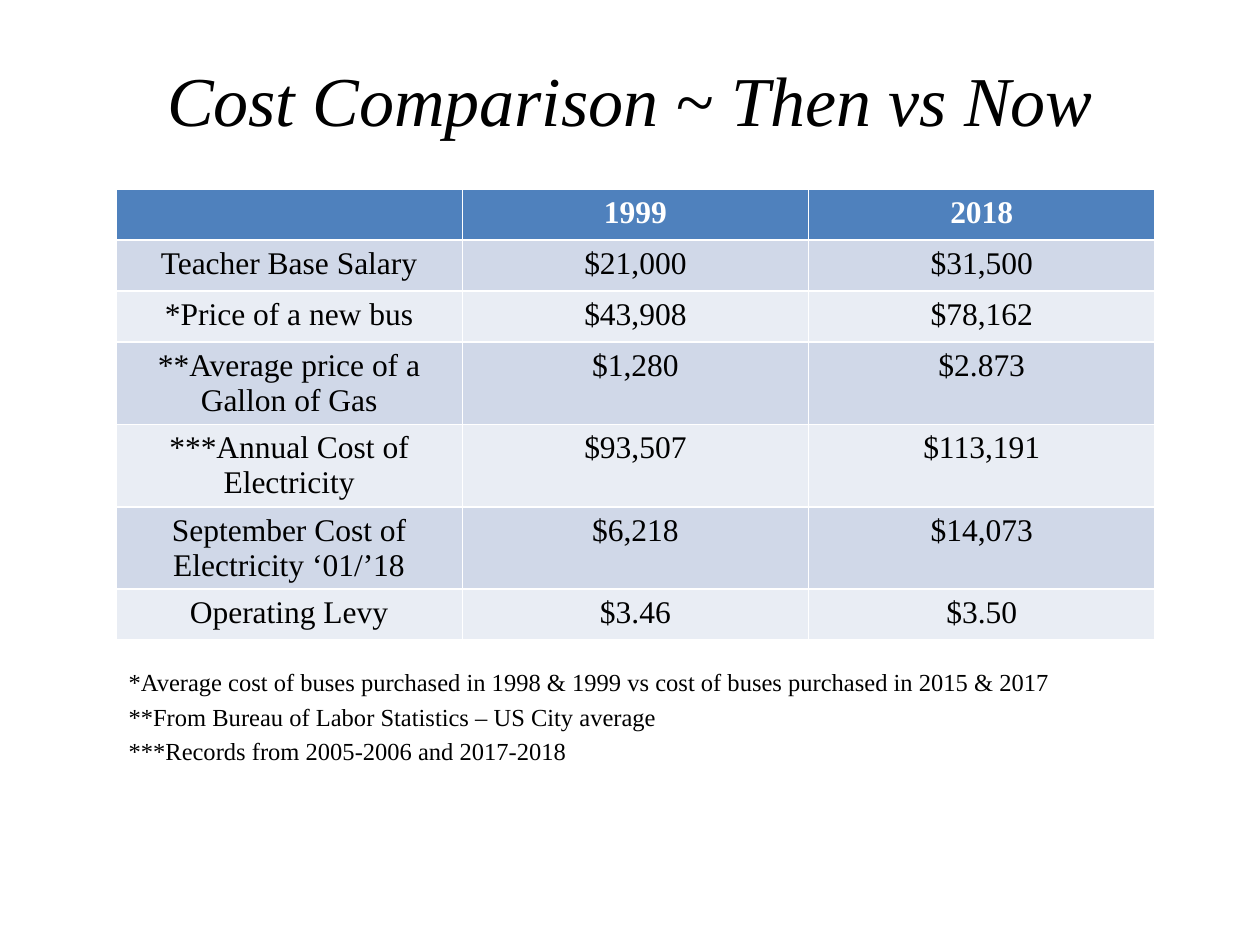
from pptx import Presentation
from pptx.dml.color import RGBColor
from pptx.enum.text import MSO_ANCHOR, PP_ALIGN
from pptx.oxml.ns import qn
from pptx.util import Emu, Pt

CENTER, LEFT = PP_ALIGN.CENTER, PP_ALIGN.LEFT
MIDDLE = MSO_ANCHOR.MIDDLE

BLACK = RGBColor(0x00, 0x00, 0x00)
WHITE = RGBColor(0xFF, 0xFF, 0xFF)
BLUE = RGBColor(0x4F, 0x81, 0xBD)
BANDS = (RGBColor(0xD0, 0xD8, 0xE8), RGBColor(0xE9, 0xED, 0xF4))
FONT = "Times New Roman"
ROW_H = 51

COSTS = [
    ("", "1999", "2018"),
    ("Teacher Base Salary", "$21,000", "$31,500"),
    ("*Price of a new bus", "$43,908", "$78,162"),
    ("**Average price of a\nGallon of Gas", "$1,280", "$2.873"),
    ("***Annual Cost of Electricity", "$93,507", "$113,191"),
    ("September Cost of Electricity ‘01/’18", "$6,218", "$14,073"),
    ("Operating Levy", "$3.46", "$3.50"),
]
NOTES = [
    "*Average cost of buses purchased in 1998 & 1999 vs cost of buses purchased in 2015 & 2017",
    "**From Bureau of Labor Statistics – US City average",
    "***Records from 2005-2006 and 2017-2018",
]


def px(n):
    return Emu(round(n * 914400 / 126))


def place(sp, box):
    sp.left, sp.top, sp.width, sp.height = map(px, box)


def style(p, size, color=BLACK, align=CENTER, bold=False, italic=False):
    p.alignment = align
    f = p.font
    f.name, f.size, f.bold, f.italic = FONT, Pt(size), bold, italic
    f.color.rgb = color


def add_title(s, box):
    sp = s.shapes.title
    place(sp, box)
    tf = sp.text_frame
    tf.text = "Cost Comparison ~ Then vs Now"
    tf.vertical_anchor = MIDDLE
    style(tf.paragraphs[0], 40, italic=True)


def add_notes(s, box):
    sp = s.placeholders[1]
    place(sp, box)
    tf = sp.text_frame
    tf.text = "\n".join(NOTES)
    for p in tf.paragraphs:
        style(p, 14, align=LEFT)
        # Plain lines: no bullet, no hanging indent
        pPr = p._p.get_or_add_pPr()
        pPr.set("marL", "0")
        pPr.set("indent", "0")
        pPr.insert_element_before(
            pPr.makeelement(qn("a:buNone"), {}), "a:tabLst", "a:defRPr", "a:extLst")


def add_cost_table(s, box):
    # White rules come from the default table style
    table = s.shapes.add_table(len(COSTS), len(COSTS[0]), *map(px, box)).table
    for r, values in enumerate(COSTS):
        header = r == 0
        table.rows[r].height = px(ROW_H)
        for c, value in enumerate(values):
            cell = table.cell(r, c)
            cell.text = value
            cell.fill.solid()
            cell.fill.fore_color.rgb = BLUE if header else BANDS[(r - 1) % 2]
            for p in cell.text_frame.paragraphs:
                style(p, 18, WHITE if header else BLACK, bold=header)


def main():
    prs = Presentation()
    prs.slide_width, prs.slide_height = px(1260), px(945)
    s = prs.slides.add_slide(prs.slide_layouts[1])
    add_title(s, (63, 38, 1134, 120))
    add_notes(s, (116, 661, 1039, 158))
    add_cost_table(s, (116, 189, 1039, ROW_H * len(COSTS)))
    prs.save("out.pptx")


if __name__ == "__main__":
    main()
